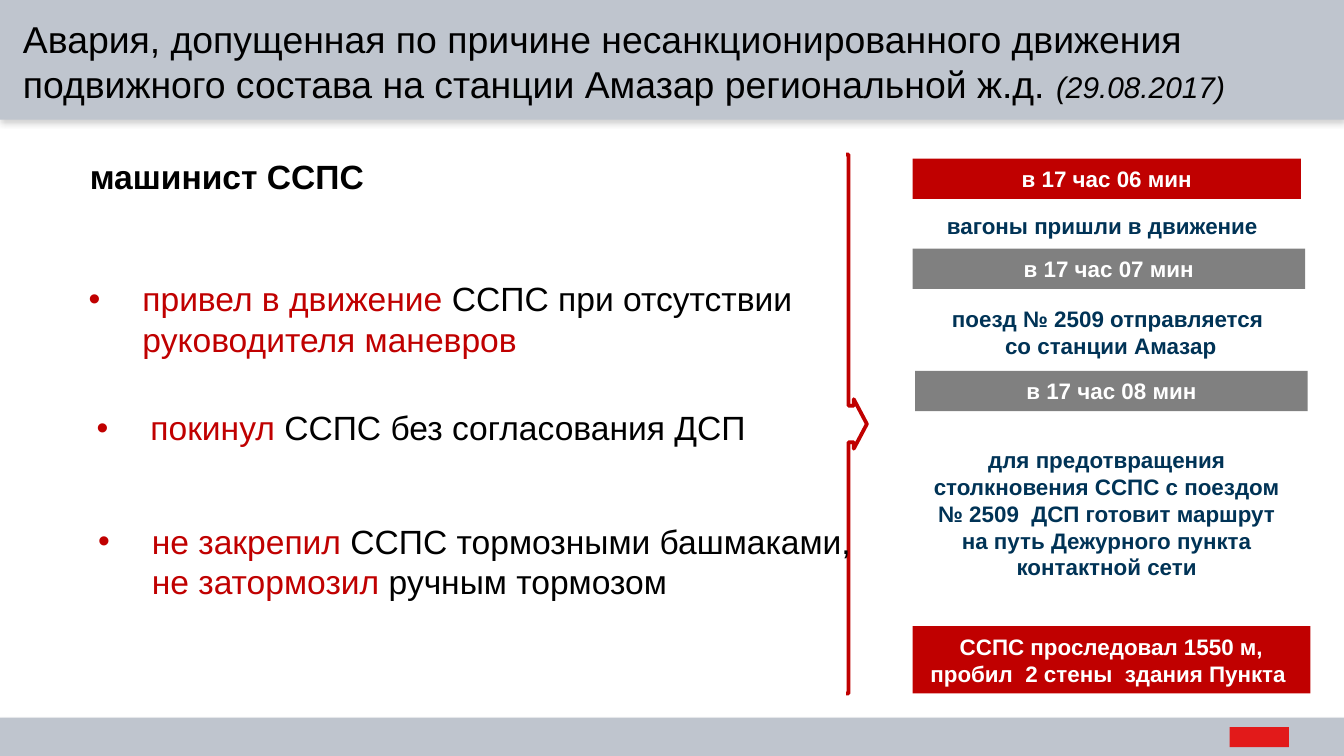
from lxml import etree
from pptx import Presentation
from pptx.dml.color import RGBColor
from pptx.enum.shapes import MSO_SHAPE as Preset
from pptx.enum.text import MSO_ANCHOR as Anchor, MSO_AUTO_SIZE as AutoSize, PP_ALIGN as Align
from pptx.oxml import parse_xml
from pptx.oxml.ns import nsdecls, qn
from pptx.util import Inches, Pt

BAND, RED, GRAY, NAVY = "BFC5CE", "C00000", "808080", "003356"
BLACK, WHITE = "000000", "FFFFFF"
color = RGBColor.from_string


def add_preset(preset, box, fill=None, line=None):
    shape = slide.shapes.add_shape(preset, *map(Inches, box))
    shape.shadow.inherit = False
    if fill:
        shape.fill.solid()
        shape.fill.fore_color.rgb = color(fill)
    else:
        shape.fill.background()
    if line:
        shape.line.color.rgb = color(line)
        shape.line.width = Pt(2)
    else:
        shape.line.fill.background()
    return shape


def add_runs(paragraph, runs):
    for text, text_color, values in runs:
        run = paragraph.add_run()
        run.text = text
        run.font.color.rgb = color(text_color)
        for name, value in ({"name": "Arial", "size": Pt(18)} | values).items():
            setattr(run.font, name, value)


# Widescreen slide, 16 to 9
presentation = Presentation()
presentation.slide_width = Inches(10)
presentation.slide_height = Inches(10) * 9 // 16
slide = presentation.slides.add_slide(presentation.slide_layouts[1])

# Header and footer bands with a soft shadow
for top, height in ((0, 0.89), (5.34, 0.29)):
    band = add_preset(Preset.RECTANGLE, (0, top, 10, height), BAND)
    effects = band._element.spPr.find(qn("a:effectLst"))
    effects.append(parse_xml(
        f'<a:outerShdw {nsdecls("a")} blurRad="{Pt(3.1)}" dist="{Pt(1.8)}" '
        'dir="5400000" rotWithShape="0"><a:srgbClr val="808080">'
        '<a:alpha val="35000"/></a:srgbClr></a:outerShdw>'))

# Plain mark in the footer
add_preset(Preset.RECTANGLE, (9.15, 5.41, 0.44, 0.15), "E21A1A")

# Divider with an arrow: a callout whose left side is covered
callout = add_preset(Preset.RIGHT_ARROW_CALLOUT, (6.06, 1.15, 0.39, 4.01), line=RED)
for index, value in enumerate((0.694, 0.472, 0.25, 0.65)):
    callout.adjustments[index] = value
add_preset(Preset.RECTANGLE, (5.91, 0.99, 0.37, 4.25), WHITE, WHITE)

# Title and list placeholders, brought in front of the bands and divider
title, body = slide.shapes.title, slide.placeholders[1]
for placeholder, box in ((title, (0.07, 0.07, 9.93, 0.77)),
                         (body, (0.56, 2.02, 5.91, 2.51))):
    slide.shapes._spTree.append(placeholder._element)
    placeholder.left, placeholder.top, placeholder.width, placeholder.height = map(Inches, box)
    frame = placeholder.text_frame
    for name, value in {"word_wrap": True, "auto_size": AutoSize.NONE,
                        "vertical_anchor": Anchor.TOP}.items():
        setattr(frame, name, value)

title_paragraph = title.text_frame.paragraphs[0]
title_paragraph.alignment = Align.LEFT
add_runs(title_paragraph, [
    ("Авария, допущенная по причине несанкционированного движения подвижного "
     "состава на станции Амазар региональной ж.д. ", BLACK, {"size": Pt(20)}),
    ("(29.08.2017)", BLACK, {"size": Pt(16), "italic": True})])

# Bulleted violations: left margin, space before, runs
violations = [
    (0.4, 0, [("привел в движение ", RED, {}), ("ССПС при отсутствии ", BLACK, {}),
              ("руководителя маневров", RED, {})]),
    (0.46, 26, [("покинул", RED, {}), (" ССПС без согласования ДСП", BLACK, {})]),
    (0.47, 39, [("не закрепил ", RED, {}), ("ССПС тормозными башмаками, ", BLACK, {}),
                ("не затормозил", RED, {}), (" ручным тормозом", BLACK, {})]),
]
for index, (margin, space, runs) in enumerate(violations):
    frame = body.text_frame
    paragraph = frame.add_paragraph() if index else frame.paragraphs[0]
    properties = paragraph._p.get_or_add_pPr()
    properties.set("marL", str(Inches(margin)))
    properties.set("indent", str(Inches(-0.4)))
    etree.SubElement(properties, qn("a:buFont"), typeface="Arial")
    etree.SubElement(properties, qn("a:buChar"), char="•")
    paragraph.space_before = Pt(space)
    add_runs(paragraph, runs)

# Heading above the list
heading = slide.shapes.add_textbox(*map(Inches, (0.57, 1.11, 3.59, 0.4)))
heading.text_frame.word_wrap = True
add_runs(heading.text_frame.paragraphs[0], [("машинист ССПС", BLACK, {"bold": True})])

# Timeline: filled time bars and the events between them
timeline = [
    ((6.79, 1.18, 2.89, 0.3), RED, "в 17 час 06 мин"),
    ((6.8, 1.53, 2.85, 0.3), None, "вагоны пришли в движение "),
    ((6.79, 1.85, 2.92, 0.3), GRAY, "в 17 час 07 мин"),
    ((6.81, 2.22, 2.91, 0.5), None, "поезд № 2509 отправляется \vсо станции Амазар"),
    ((6.81, 2.76, 2.92, 0.3), GRAY, "в 17 час 08 мин"),
    ((6.77, 3.27, 2.93, 1.11), None,
     "для предотвращения столкновения ССПС с поездом № 2509  ДСП готовит маршрут "
     "на путь Дежурного пункта контактной сети"),
    ((6.79, 4.66, 2.96, 0.5), RED,
     "ССПС проследовал 1550 м,\nпробил  2 стены  здания Пункта "),
]
for box, fill, text in timeline:
    if fill:
        shape = add_preset(Preset.RECTANGLE, box, fill)
    else:
        shape = slide.shapes.add_textbox(*map(Inches, box))
    shape.text_frame.word_wrap = True
    shape.text_frame.text = text
    for paragraph in shape.text_frame.paragraphs:
        paragraph.alignment = Align.CENTER
        for run in paragraph.runs:
            run.font.color.rgb = color(WHITE if fill else NAVY)
            for name, value in {"name": "Arial", "size": Pt(12), "bold": True}.items():
                setattr(run.font, name, value)

presentation.save("out.pptx")
